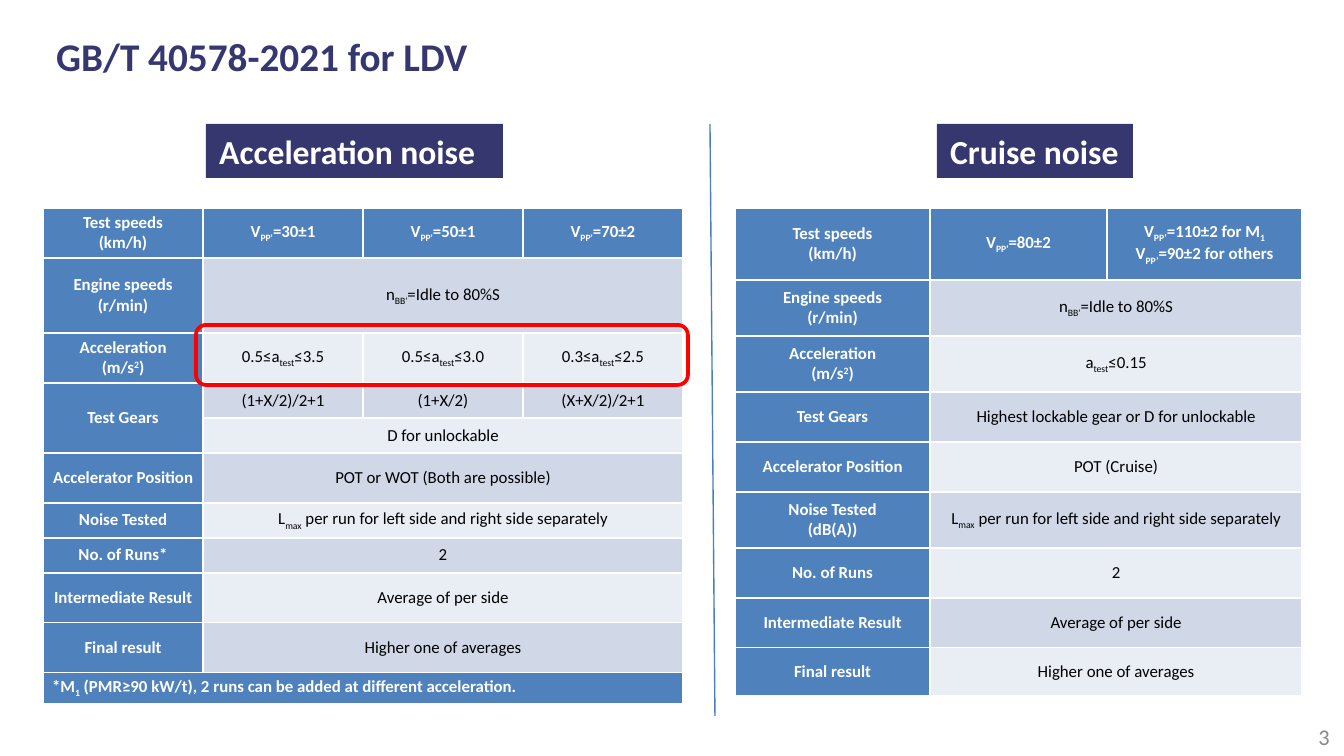
from lxml.etree import SubElement
from pptx import Presentation
from pptx.dml.color import RGBColor
from pptx.enum.shapes import MSO_CONNECTOR, MSO_SHAPE
from pptx.enum.text import MSO_ANCHOR, PP_ALIGN
from pptx.oxml.ns import qn
from pptx.util import Pt

PX = 914400 / 134.4
FONT = "Calibri"
COLORS = {
    "navy": "36376F", "white": "FFFFFF", "black": "000000", "gray": "898989",
    "header": "4F81BD", "band_dark": "D0D8E8", "band_light": "E9EDF4",
    "divider": "4B7EBC", "highlight": "FF0000",
}

# Text between bars is subscript, or superscript if it starts with ^.
# None continues the cell to its left, ... the cell above.
ENGINE_SPEEDS = ["Engine speeds\n(r/min)", "n|BB'|=Idle to 80%S"]
ACCELERATION = "Acceleration\n(m/s|^2|)"
MAX_LEVEL = "L|max| per run for left side and right side separately"
RESULTS = [
    ["Intermediate Result", "Average of per side"],
    ["Final result", "Higher one of averages"],
]
ACCELERATION_ROWS = [
    ["Test speeds\n(km/h)", "V|PP'|=30±1", "V|PP'|=50±1", "V|PP'|=70±2"],
    ENGINE_SPEEDS,
    [ACCELERATION, "0.5≤a|test|≤3.5", "0.5≤a|test|≤3.0", "0.3≤a|test|≤2.5"],
    ["Test Gears", "(1+X/2)/2+1", "(1+X/2)", "(X+X/2)/2+1"],
    [..., "D for unlockable"],
    ["Accelerator Position", "POT or WOT (Both are possible)"],
    ["Noise Tested", MAX_LEVEL],
    ["No. of Runs*", "2"],
    *RESULTS,
    ["*M|1| (PMR≥90 kW/t), 2 runs can be added at different acceleration."],
]
CRUISE_ROWS = [
    ["Test speeds\n(km/h)", "V|PP'|=80±2",
     "V|PP’|=110±2 for M|1|\nV|PP’|=90±2 for others"],
    ENGINE_SPEEDS,
    [ACCELERATION, "a|test|≤0.15"],
    ["Test Gears", "Highest lockable gear or D for unlockable"],
    ["Accelerator Position", "POT (Cruise)"],
    ["Noise Tested\n(dB(A))", MAX_LEVEL],
    ["No. of Runs", "2"],
    *RESULTS,
]


def px(*lengths):
    return [round(length * PX) for length in lengths]


def color(name):
    return RGBColor.from_string(COLORS[name])


def write_text(frame, text, size, color_name, bold=False, align=PP_ALIGN.LEFT):
    """Write one paragraph per line, with a run for each shifted part."""
    for index, line in enumerate(text.split("\n")):
        paragraph = frame.paragraphs[0] if index == 0 else frame.add_paragraph()
        paragraph.alignment = align
        for position, part in enumerate(line.split("|")):
            if not part:
                continue
            run = paragraph.add_run()
            run.text = part.lstrip("^")
            run.font.name = FONT
            run.font.size = Pt(size)
            run.font.bold = bold
            run.font.color.rgb = color(color_name)
            if position % 2:
                baseline = "30000" if part.startswith("^") else "-25000"
                run.font._element.set("baseline", baseline)


def add_label(slide, box, text, size, color_name, **style):
    frame = slide.shapes.add_textbox(*px(*box)).text_frame
    frame.word_wrap = True
    write_text(frame, text, size, color_name, **style)
    return frame


def add_heading(slide, box, text):
    shape = slide.shapes.add_shape(MSO_SHAPE.RECTANGLE, *px(*box))
    shape.shadow.inherit = False
    shape.fill.solid()
    shape.fill.fore_color.rgb = color("navy")
    shape.line.fill.background()
    frame = shape.text_frame
    frame.word_wrap = False
    frame.vertical_anchor = MSO_ANCHOR.TOP
    write_text(frame, text, 18, "white", bold=True)


def add_divider(slide, start, end):
    line = slide.shapes.add_connector(MSO_CONNECTOR.STRAIGHT, *px(*start, *end))
    line.line.color.rgb = color("divider")
    line.line.width = Pt(0.75)
    SubElement(line._element.spPr, qn("a:effectLst"))


def add_highlight(slide, box):
    shape = slide.shapes.add_shape(MSO_SHAPE.ROUNDED_RECTANGLE, *px(*box))
    shape.shadow.inherit = False
    shape.fill.background()
    shape.line.color.rgb = color("highlight")
    shape.line.width = Pt(2)


def style_cell(cell, fill_name):
    cell.fill.solid()
    cell.fill.fore_color.rgb = color(fill_name)
    cell.vertical_anchor = MSO_ANCHOR.MIDDLE
    cell.margin_left, cell.margin_right = px(9, 9)
    cell.margin_top = cell.margin_bottom = 0


def add_test_table(slide, left, top, widths, heights, rows):
    """Add a table whose short rows let their last cell span to the right edge."""
    last = len(widths) - 1
    table = slide.shapes.add_table(
        len(heights), len(widths),
        *px(left, top, sum(widths), sum(heights))).table
    for column, width in zip(table.columns, px(*widths)):
        column.width = width
    for row, height in zip(table.rows, px(*heights)):
        row.height = height
    for r, texts in enumerate(rows):
        band = "band_dark" if r % 2 else "band_light"
        for c in range(len(widths)):
            is_header = r == 0 or c == 0 or len(texts) == 1
            style_cell(table.cell(r, c), "header" if is_header else band)
        for c, text in enumerate(texts):
            cell = table.cell(r, c)
            if text is ...:
                table.cell(r - 1, c).merge(cell)
                continue
            if c == len(texts) - 1 and c < last:
                cell.merge(table.cell(r, last))
            is_header = r == 0 or c == 0
            align = PP_ALIGN.LEFT if len(texts) == 1 else PP_ALIGN.CENTER
            write_text(cell.text_frame, text, 9,
                       "white" if is_header else "black", is_header, align)


def main():
    presentation = Presentation()
    presentation.slide_width, presentation.slide_height = px(1344, 756)
    slide = presentation.slides.add_slide(presentation.slide_layouts[6])

    add_label(slide, (43, 26, 1116, 60), "GB/T 40578-2021 for LDV", 21, "navy",
              bold=True)
    add_divider(slide, (710, 124), (715, 716))
    add_heading(slide, (206, 124, 297, 54), "Acceleration noise")
    add_heading(slide, (937, 124, 196, 54), "Cruise noise")
    add_test_table(slide, 43, 208, [160] * 4,
                   [50, 75, 50, 35, 35, 50, 35, 35, 50, 50, 31],
                   ACCELERATION_ROWS)
    add_test_table(slide, 735, 208, [195, 177, 195],
                   [72, 56, 56, 50, 50, 56, 50, 50, 48], CRUISE_ROWS)
    add_highlight(slide, (196, 325, 492, 60))
    page_number = add_label(slide, (1292, 719, 51, 36), "3", 12, "gray",
                            align=PP_ALIGN.RIGHT)
    page_number.vertical_anchor = MSO_ANCHOR.MIDDLE
    presentation.save("out.pptx")


if __name__ == "__main__":
    main()
